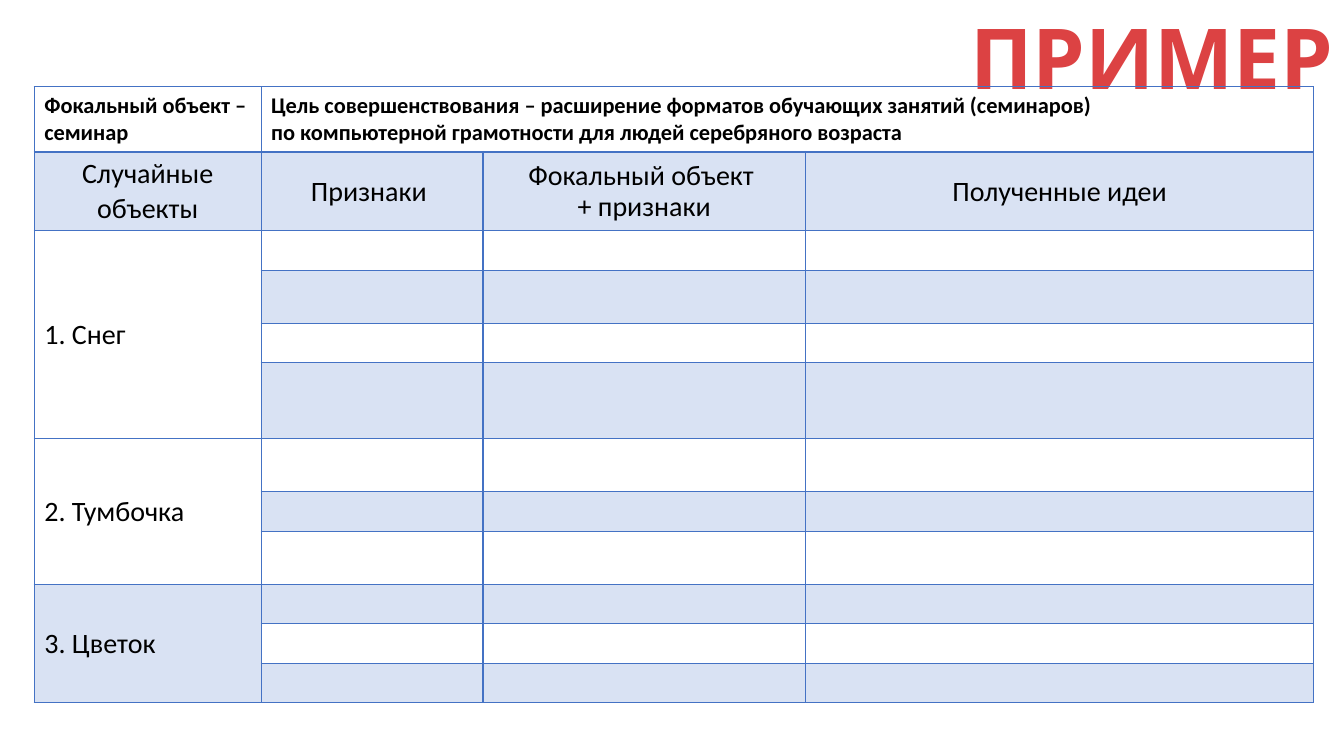
from lxml import etree
from pptx import Presentation
from pptx.dml.color import RGBColor
from pptx.enum.text import MSO_ANCHOR, PP_ALIGN
from pptx.oxml.ns import qn
from pptx.util import Inches, Pt

LEFT, CENTER, RIGHT = PP_ALIGN.LEFT, PP_ALIGN.CENTER, PP_ALIGN.RIGHT
TOP, MIDDLE = MSO_ANCHOR.TOP, MSO_ANCHOR.MIDDLE
TITLE_ONLY = 5

BLUE, RED, BLACK = "4472C4", "DC4243", "000000"
TINT_ALPHA = "20000"
COLUMNS = [2.25, 2.2, 3.2, 5.04]
ROWS = [0.65, 0.78, 0.39, 0.53, 0.39, 0.75, 0.53, 0.39, 0.53, 0.39, 0.39, 0.39]
HEADING_ROW = 1

GOAL = {"size": Pt(16), "bold": True, "name": "Calibri"}
BODY = {"size": Pt(20), "bold": False, "name": "Calibri"}
TITLE = {"size": Pt(60), "bold": True, "name": "Karla"}

GOALS = [
    "Фокальный объект – семинар",
    "Цель совершенствования – расширение форматов обучающих занятий (семинаров)"
    "\vпо компьютерной грамотности для людей серебряного возраста",
]
HEADINGS = [
    ("Случайные объекты", 1),
    ("Признаки ", 1),
    ("Фокальный объект \n+ признаки", 0.9),
    ("Полученные идеи", 1),
]
OBJECTS = [("1. Снег", 4), ("2. Тумбочка", 3), ("3. Цветок", 3)]


def paint(color_format, hex_color):
    color_format.rgb = RGBColor.from_string(hex_color)


def write(frame, text, font, color=BLACK, align=LEFT, spacing=1.0):
    frame.text = text
    for para in frame.paragraphs:
        para.alignment = align
        para.line_spacing = spacing
        for span in para.runs:
            for name, value in font.items():
                setattr(span.font, name, value)
            paint(span.font.color, color)


def fill_cell(cell, text, font, anchor=MIDDLE, **layout):
    cell.vertical_anchor = anchor
    write(cell.text_frame, text, font, **layout)


def add_border(cell, side, points):
    properties = cell._tc.get_or_add_tcPr()
    line = etree.SubElement(properties, qn(f"a:ln{side}"), w=str(Pt(points)))
    solid = etree.SubElement(line, qn("a:solidFill"))
    etree.SubElement(solid, qn("a:srgbClr"), val=BLUE)


def tint(cell):
    """Fill the cell with see-through blue."""
    cell.fill.solid()
    paint(cell.fill.fore_color, BLUE)
    color = cell._tc.tcPr.find(qn("a:solidFill")).find(qn("a:srgbClr"))
    etree.SubElement(color, qn("a:alpha"), val=TINT_ALPHA)


def style_cell(cell, row):
    """Draw the borders, tint every second row and keep empty rows low."""
    cell.margin_top = cell.margin_bottom = Inches(0.05 if row <= HEADING_ROW else 0.03)
    thick_side = {0: "B", HEADING_ROW: "T"}.get(row)
    for side in "LRTB":
        add_border(cell, side, 2 if side == thick_side else 1)
    if row % 2:
        tint(cell)
    else:
        cell.fill.background()


def add_grid(page):
    table = page.shapes.add_table(
        len(ROWS), len(COLUMNS), Inches(0.34), Inches(0.86),
        Inches(sum(COLUMNS)), Inches(sum(ROWS))).table
    table.first_row = table.horz_banding = False
    for column, width in zip(table.columns, COLUMNS):
        column.width = Inches(width)
    for index, (row, height) in enumerate(zip(table.rows, ROWS)):
        row.height = Inches(height)
        for cell in row.cells:
            style_cell(cell, index)
    return table


def add_title(page, text):
    title = page.shapes.title
    title.left, title.top = Inches(1.83), Inches(0.1)
    title.width, title.height = Inches(11.5), Inches(1.03)
    title.text_frame.vertical_anchor = MIDDLE
    write(title.text_frame, text, TITLE, RED, RIGHT, 0.9)


def main():
    deck = Presentation()
    deck.slide_width, deck.slide_height = Inches(13.33), Inches(7.5)
    page = deck.slides.add_slide(deck.slide_layouts[TITLE_ONLY])
    add_title(page, "ПРИМЕР")

    table = add_grid(page)
    table.cell(0, 1).merge(table.cell(0, len(COLUMNS) - 1))
    for column, text in enumerate(GOALS):
        fill_cell(table.cell(0, column), text, GOAL, TOP)
    for column, (text, spacing) in enumerate(HEADINGS):
        fill_cell(table.cell(HEADING_ROW, column), text, BODY,
                  align=CENTER, spacing=spacing)

    row = HEADING_ROW + 1
    for text, height in OBJECTS:
        table.cell(row, 0).merge(table.cell(row + height - 1, 0))
        fill_cell(table.cell(row, 0), text, BODY)
        row += height

    deck.save("out.pptx")


if __name__ == "__main__":
    main()
